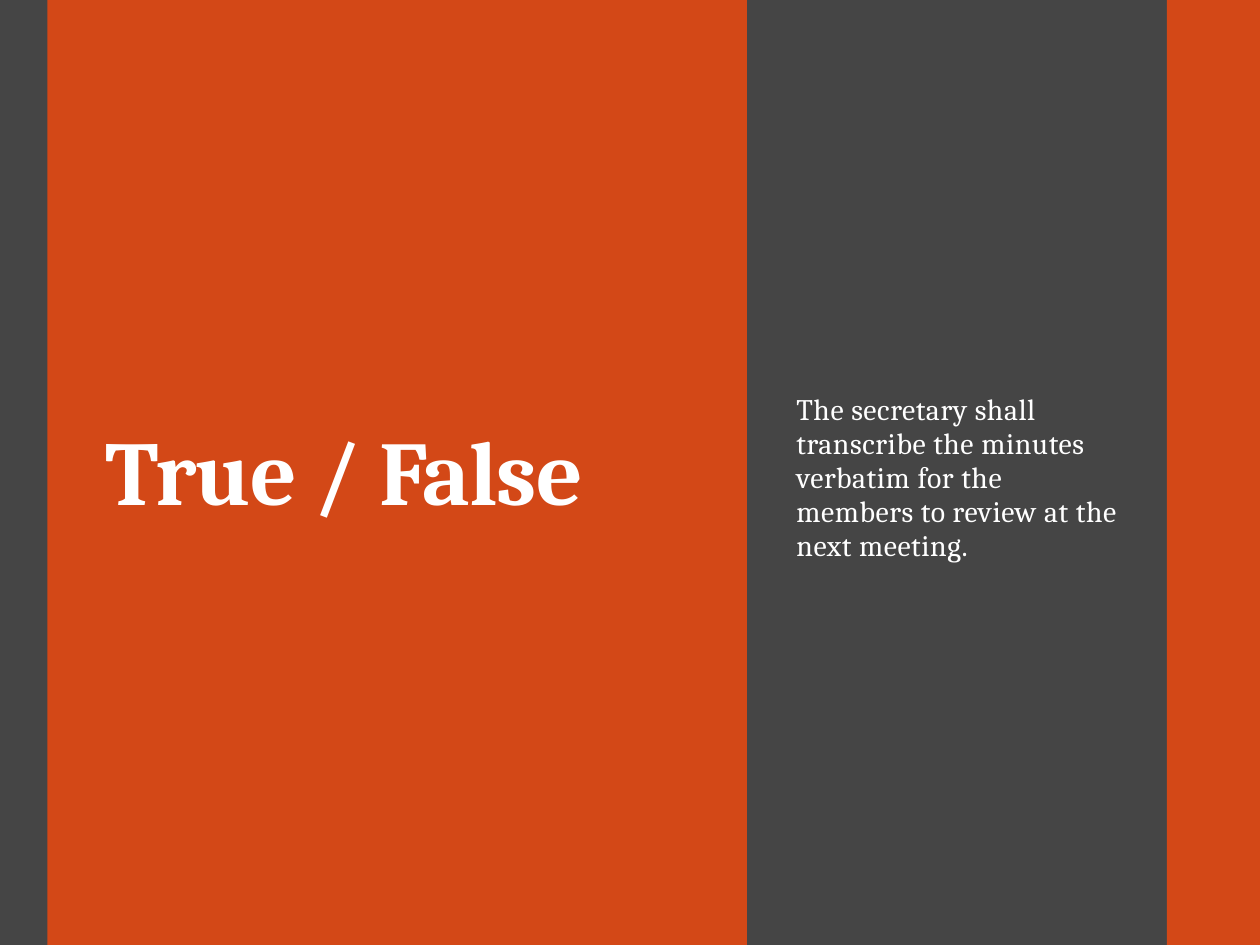
import pptx
import pptx.dml.color
import pptx.enum.shapes
import pptx.enum.text
import pptx.util

Pt = pptx.util.Pt
ORANGE, CHARCOAL, WHITE = "D34817", "454545", "FFFFFF"
SLIDE_WIDTH, SLIDE_HEIGHT = 720, 540
TEXT_TOP, TEXT_HEIGHT = 73.5, 400

# Left edge and colour of each stripe; a stripe ends where the next begins
STRIPES = [(0, CHARCOAL), (27, ORANGE), (427, CHARCOAL), (666.75, ORANGE)]


def paint(fill, color):
    fill.solid()
    fill.fore_color.rgb = pptx.dml.color.RGBColor.from_string(color)


def add_stripe(slide, left, right, color):
    stripe = slide.shapes.add_shape(
        pptx.enum.shapes.MSO_SHAPE.RECTANGLE,
        Pt(left), Pt(0), Pt(right - left), Pt(SLIDE_HEIGHT))
    stripe.shadow.inherit = False
    paint(stripe.fill, color)
    stripe.line.fill.background()
    return stripe


def write_text(holder, left, width, text, size, line_spacing, tracking, bold=False):
    holder.left, holder.top = Pt(left), Pt(TEXT_TOP)
    holder.width, holder.height = Pt(width), Pt(TEXT_HEIGHT)
    frame = holder.text_frame
    frame.text = text
    frame.word_wrap = True
    frame.auto_size = pptx.enum.text.MSO_AUTO_SIZE.NONE
    frame.vertical_anchor = pptx.enum.text.MSO_ANCHOR.MIDDLE
    paragraph = frame.paragraphs[0]
    paragraph.alignment = pptx.enum.text.PP_ALIGN.LEFT
    paragraph.line_spacing = line_spacing
    font = paragraph.font
    font.name, font.size, font.bold = "Cambria", Pt(size), bold
    paint(font.fill, WHITE)
    # Letter spacing, in hundredths of a point
    font._element.set("spc", str(round(tracking * 100)))
    return frame


def main():
    deck = pptx.Presentation()
    deck.slide_width, deck.slide_height = Pt(SLIDE_WIDTH), Pt(SLIDE_HEIGHT)
    slide = deck.slides.add_slide(deck.slide_layouts[5])
    paint(slide.background.fill, CHARCOAL)

    # Background stripes
    ends = [left for left, _ in STRIPES[1:]] + [SLIDE_WIDTH]
    for (left, color), right in zip(STRIPES, ends):
        add_stripe(slide, left, right, color)

    # Title, brought in front of the stripes
    title = slide.shapes.title
    slide.shapes._spTree.append(title._element)
    title_frame = write_text(title, 53.25, 358, "True / False", 52, 0.85, -0.5, bold=True)
    title_frame.margin_top = Pt(2.25)

    # Statement to judge
    statement = slide.shapes.add_textbox(Pt(0), Pt(0), Pt(0), Pt(0))
    statement_frame = write_text(
        statement, 448, 198,
        "The secretary shall transcribe the minutes verbatim "
        "for the members to review at the next meeting.",
        17, 0.95, 0.3)
    statement_frame.paragraphs[0].space_before = Pt(14)
    statement_frame.paragraphs[0].space_after = Pt(2)

    deck.save("out.pptx")


if __name__ == "__main__":
    main()
